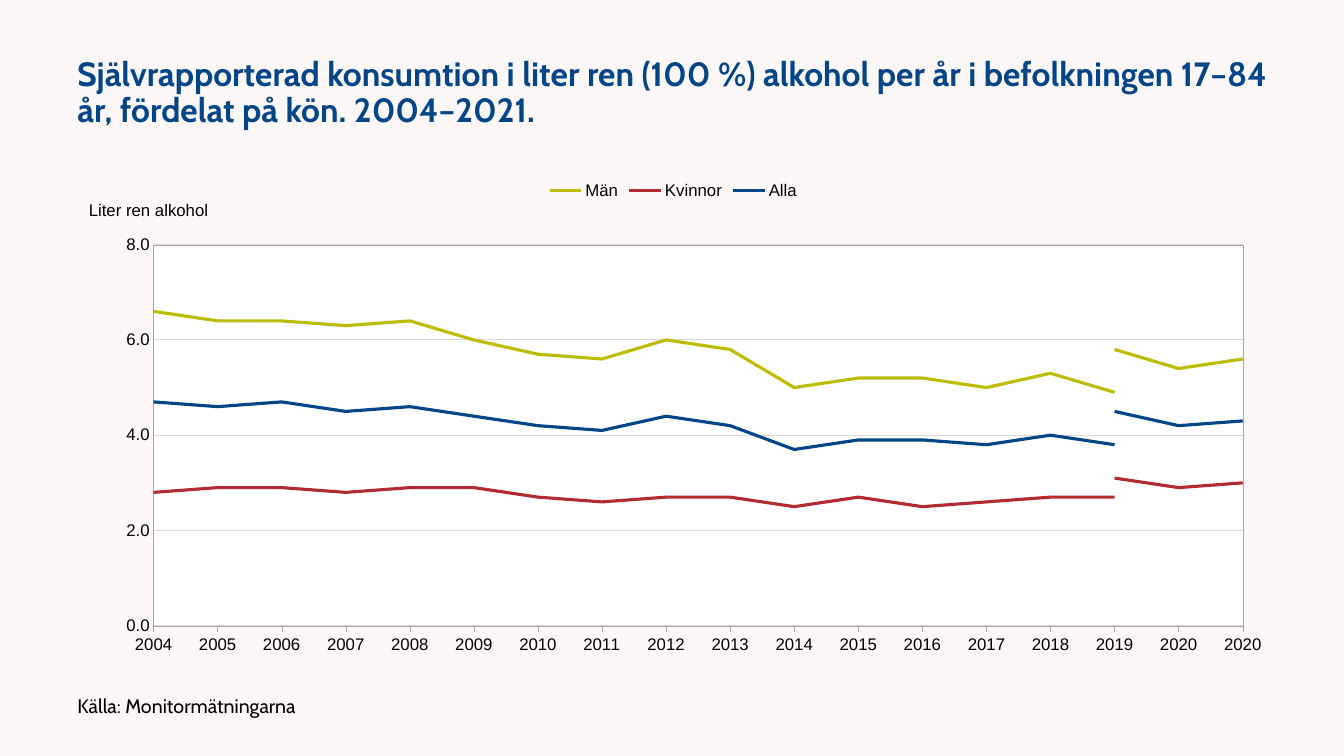
from dataclasses import dataclass

from lxml.etree import SubElement
from pptx import Presentation
from pptx.chart.chart import Chart
from pptx.chart.data import CategoryChartData
from pptx.dml.color import RGBColor
from pptx.dml.line import LineFormat
from pptx.enum.chart import XL_CHART_TYPE as ChartType
from pptx.enum.chart import XL_LEGEND_POSITION as LegendPosition
from pptx.enum.chart import XL_TICK_MARK as TickMark
from pptx.enum.text import MSO_ANCHOR as Anchor
from pptx.oxml import parse_xml
from pptx.oxml.ns import nsdecls, qn
from pptx.slide import Slide
from pptx.text.text import Font
from pptx.util import Pt


@dataclass(frozen=True)
class Theme:
    background: str = "FEF7F7"
    plot: str = "FFFFFF"
    text: str = "000000"
    blue: str = "004687"
    olive: str = "BEBC00"
    red: str = "B32B31"
    axis: str = "A6A6A6"
    grid: str = "D9D9D9"
    text_font: str = "Cabin"
    chart_font: str = "Arial"
    heading_size: float = 24
    source_size: float = 14
    chart_size: float = 12


@dataclass(frozen=True)
class Box:
    left: float
    top: float
    width: float
    height: float


@dataclass(frozen=True)
class Caption:
    text: str
    box: Box
    size: float
    color: str
    bold: bool = False


@dataclass(frozen=True)
class Consumption:
    name: str
    color: str
    until_2019: tuple[float, ...]
    from_2019: tuple[float, ...]


THEME = Theme()
YEARS = [str(year) for year in range(2004, 2021)] + ["2020"]
CHART_BOX = Box(48.24, 121.68, 865.44, 356.4)

CAPTIONS = (
    Caption(
        "Självrapporterad konsumtion i liter ren (100 %) alkohol per år i befolkningen 17–84 år, "
        "fördelat på kön. 2004–2021.",
        Box(48.24, 21.6, 864, 90), THEME.heading_size, THEME.blue, True,
    ),
    Caption(
        "Källa: Monitormätningarna",
        Box(48.24, 491.76, 432, 26.64), THEME.source_size, THEME.text,
    ),
)

GROUPS = (
    Consumption(
        "Män", THEME.olive,
        (6.6, 6.4, 6.4, 6.3, 6.4, 6.0, 5.7, 5.6, 6.0, 5.8, 5.0, 5.2, 5.2, 5.0, 5.3, 4.9),
        (5.8, 5.4, 5.6),
    ),
    Consumption(
        "Kvinnor", THEME.red,
        (2.8, 2.9, 2.9, 2.8, 2.9, 2.9, 2.7, 2.6, 2.7, 2.7, 2.5, 2.7, 2.5, 2.6, 2.7, 2.7),
        (3.1, 2.9, 3.0),
    ),
    Consumption(
        "Alla", THEME.blue,
        (4.7, 4.6, 4.7, 4.5, 4.6, 4.4, 4.2, 4.1, 4.4, 4.2, 3.7, 3.9, 3.9, 3.8, 4.0, 3.8),
        (4.5, 4.2, 4.3),
    ),
)


def style_font(font: Font, name: str, size: float, color: str, bold: bool = False) -> None:
    font.name = name
    font.size = Pt(size)
    font.bold = bold
    font.color.rgb = RGBColor.from_string(color)


def style_line(line: LineFormat, color: str, width: float) -> None:
    line.color.rgb = RGBColor.from_string(color)
    line.width = Pt(width)


def add_caption(slide: Slide, caption: Caption) -> None:
    box = caption.box
    frame = slide.shapes.add_textbox(
        Pt(box.left), Pt(box.top), Pt(box.width), Pt(box.height)
    ).text_frame
    frame.word_wrap = True
    frame.vertical_anchor = Anchor.MIDDLE
    frame.text = caption.text
    paragraph = frame.paragraphs[0]
    paragraph.line_spacing = 0.9
    style_font(paragraph.runs[0].font, THEME.text_font, caption.size, caption.color, caption.bold)


def set_layout(parent, index: int, **settings: str | float) -> None:
    for previous in parent.findall(qn("c:layout")):
        parent.remove(previous)
    layout = parse_xml(f"<c:layout {nsdecls('c')}><c:manualLayout/></c:layout>")
    for tag, value in settings.items():
        SubElement(layout[0], qn(f"c:{tag}")).set("val", str(value))
    parent.insert(index, layout)


def consumption_data() -> CategoryChartData:
    data = CategoryChartData(number_format="0.0")
    data.categories = YEARS
    for position, group in enumerate(GROUPS, start=1):
        gap_after = len(YEARS) - len(group.until_2019)
        gap_before = len(YEARS) - len(group.from_2019)
        data.add_series(group.name, [*group.until_2019, *[None] * gap_after])
        data.add_series(f"Series {2 * position}", [*[None] * gap_before, *group.from_2019])
    return data


def style_plot_area(chart: Chart) -> None:
    plot_area = chart.element.find(f".//{qn('c:plotArea')}")
    set_layout(plot_area, 0, layoutTarget="inner", xMode="edge", yMode="edge",
               x=0.071, y=0.149, w=0.899, h=0.764)
    plot_area.append(parse_xml(
        f"<c:spPr {nsdecls('c', 'a')}>"
        f'<a:solidFill><a:srgbClr val="{THEME.plot}"/></a:solidFill>'
        f'<a:ln w="{Pt(0.25)}"><a:solidFill><a:srgbClr val="{THEME.axis}"/></a:solidFill></a:ln>'
        "</c:spPr>"
    ))
    value_axis = plot_area.find(qn("c:valAx"))
    for previous in value_axis.findall(qn("c:crossBetween")):
        value_axis.remove(previous)
    value_axis.find(qn("c:crosses")).addnext(
        parse_xml(f'<c:crossBetween {nsdecls("c")} val="midCat"/>')
    )


def style_axes(chart: Chart) -> None:
    years, litres = chart.category_axis, chart.value_axis
    for axis, mark in ((years, TickMark.OUTSIDE), (litres, TickMark.NONE)):
        axis.major_tick_mark = mark
        axis.minor_tick_mark = TickMark.NONE
        style_line(axis.format.line, THEME.axis, 0.25)
        style_font(axis.tick_labels.font, THEME.chart_font, THEME.chart_size, THEME.text)
    litres.minimum_scale, litres.maximum_scale, litres.major_unit = 0, 8, 2
    litres.tick_labels.number_format = "0.0"
    litres.tick_labels.number_format_is_linked = False
    litres.has_major_gridlines = True
    style_line(litres.major_gridlines.format.line, THEME.grid, 0.75)

    unit = litres.axis_title
    unit.text_frame.text = "Liter ren alkohol"
    style_font(unit.text_frame.paragraphs[0].runs[0].font,
               THEME.chart_font, THEME.chart_size, THEME.text)
    title = litres.axis_title.format.element if hasattr(unit.format, "element") else unit.element
    body = title.find(f".//{qn('a:bodyPr')}")
    body.set("rot", "0")
    body.set("vert", "horz")
    set_layout(title, 1, xMode="edge", yMode="edge", x=0.015, y=0.053)


def style_legend(chart: Chart) -> None:
    chart.has_legend = True
    legend = chart.legend
    legend.position = LegendPosition.TOP
    legend.include_in_layout = False
    style_font(legend.font, THEME.chart_font, THEME.chart_size, THEME.text)
    position = chart.element.find(f".//{qn('c:legendPos')}")
    for hidden in reversed(range(1, 2 * len(GROUPS), 2)):
        position.addnext(parse_xml(
            f'<c:legendEntry {nsdecls("c")}><c:idx val="{hidden}"/><c:delete val="1"/></c:legendEntry>'
        ))


def add_consumption_chart(slide: Slide) -> None:
    box = CHART_BOX
    chart = slide.shapes.add_chart(
        ChartType.LINE, Pt(box.left), Pt(box.top), Pt(box.width), Pt(box.height),
        consumption_data(),
    ).chart
    chart.has_title = False
    style_font(chart.font, THEME.chart_font, THEME.chart_size, THEME.text)
    style_plot_area(chart)
    style_axes(chart)
    style_legend(chart)
    plot = chart.plots[0]
    plot.vary_by_categories = False
    for index, period in enumerate(plot.series):
        period.smooth = False
        style_line(period.format.line, GROUPS[index // 2].color, 2.25)


def main() -> None:
    deck = Presentation()
    deck.slide_width, deck.slide_height = Pt(960), Pt(540)
    slide = deck.slides.add_slide(deck.slide_layouts[6])
    slide.background.fill.solid()
    slide.background.fill.fore_color.rgb = RGBColor.from_string(THEME.background)
    add_consumption_chart(slide)
    for caption in CAPTIONS:
        add_caption(slide, caption)
    deck.save("out.pptx")


if __name__ == "__main__":
    main()
